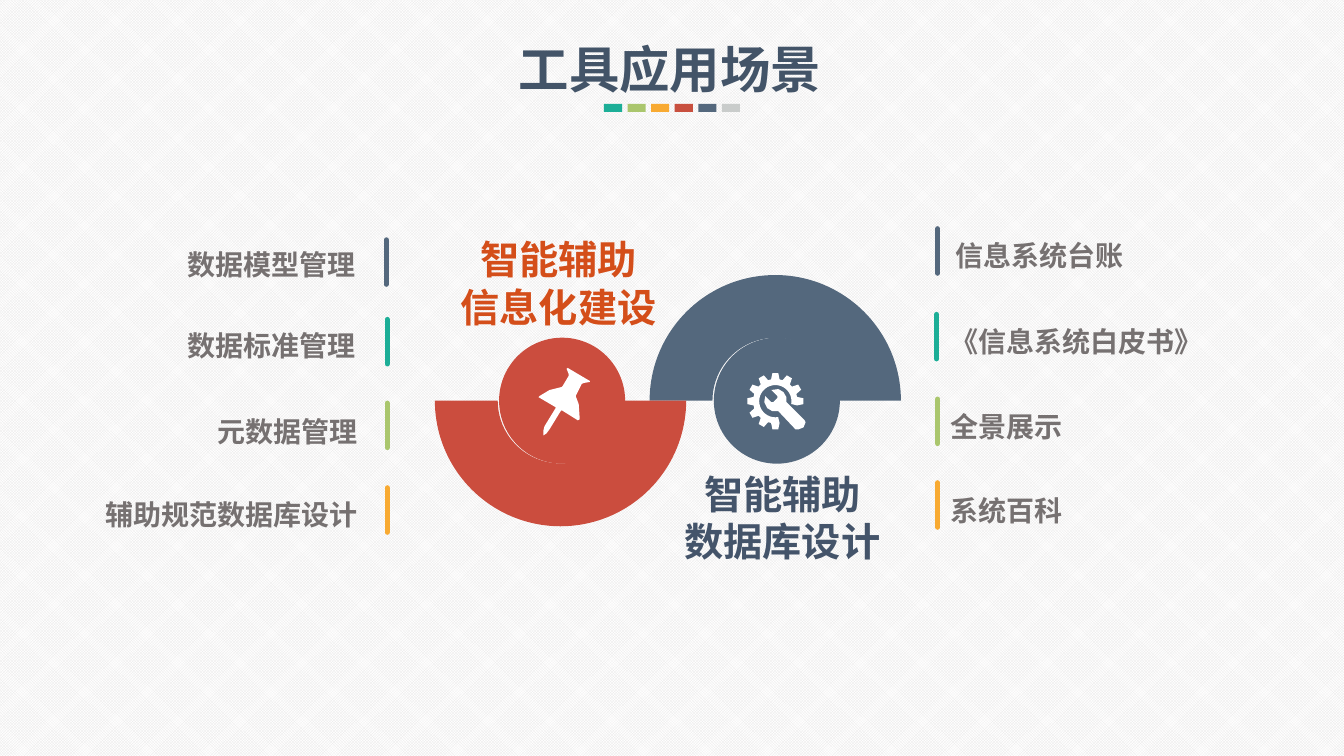
from math import cos, radians, sin

from lxml.etree import SubElement
from pptx import Presentation
from pptx.chart.data import CategoryChartData
from pptx.dml.color import RGBColor
from pptx.enum.chart import XL_CHART_TYPE as CHART
from pptx.enum.dml import MSO_PATTERN
from pptx.enum.shapes import MSO_CONNECTOR, MSO_SHAPE
from pptx.enum.text import MSO_ANCHOR, MSO_AUTO_SIZE, PP_ALIGN as ALIGN
from pptx.oxml import parse_xml
from pptx.oxml.ns import nsdecls, qn
from pptx.util import Inches, Pt

FONT = "Noto Sans CJK SC"
WHITE = RGBColor(0xFF, 0xFF, 0xFF)
CHECK = RGBColor(0xE7, 0xE6, 0xE6)
TEAL = RGBColor(0x1C, 0xAE, 0x97)
GREEN = RGBColor(0xAA, 0xC6, 0x6D)
AMBER = RGBColor(0xF8, 0xAA, 0x32)
BRICK = RGBColor(0xC8, 0x4F, 0x3E)
RED = RGBColor(0xCB, 0x4D, 0x3E)
SLATE = RGBColor(0x54, 0x68, 0x7D)
SILVER = RGBColor(0xC9, 0xCC, 0xCB)
TITLE = RGBColor(0x43, 0x54, 0x68)
NAVY = RGBColor(0x44, 0x54, 0x6A)
ORANGE = RGBColor(0xD4, 0x4E, 0x1A)
GREY = RGBColor(0x76, 0x71, 0x71)
BLACK = RGBColor(0, 0, 0)

ROW_COLORS = (SLATE, TEAL, GREEN, AMBER)
LEFT_ROWS = (("数据模型管理", 3.83, 2.38, 0.72, 2.31),
             ("数据标准管理", 3.84, 3.17, 0.72, 3.11),
             ("元数据管理", 3.84, 4, 0.74, 3.96),
             ("辅助规范数据库设计", 3.84, 4.84, 0.74, 4.79))
RIGHT_ROWS = (("信息系统台账", 9.3, 2.27, 9.38, 2.22),
              ("《信息系统白皮书》", 9.29, 3.12, 9.33, 3.07),
              ("全景展示", 9.3, 3.96, 9.33, 3.91),
              ("系统百科", 9.3, 4.79, 9.33, 4.75))
WRENCH = ((7.99, 4.19), (7.98, 4.17), (7.8, 3.99), (7.8, 3.94), (7.77, 3.89),
          (7.72, 3.86), (7.65, 3.87), (7.71, 3.93), (7.71, 3.95), (7.67, 3.99),
          (7.65, 3.99), (7.59, 3.93), (7.58, 3.99), (7.61, 4.05), (7.66, 4.08),
          (7.72, 4.08), (7.89, 4.26), (7.92, 4.26), (7.97, 4.24))
PIN = ((5.39, 4.27), (5.4, 4.23), (5.51, 4.05), (5.51, 4.04), (5.34, 3.94),
       (5.35, 3.93), (5.45, 3.87), (5.57, 3.84), (5.58, 3.83), (5.64, 3.73),
       (5.64, 3.71), (5.62, 3.66), (5.63, 3.65), (5.85, 3.78), (5.85, 3.79),
       (5.79, 3.8), (5.77, 3.81), (5.72, 3.91), (5.71, 3.93), (5.74, 4.01),
       (5.75, 4.16), (5.73, 4.17), (5.57, 4.07), (5.56, 4.08), (5.45, 4.26),
       (5.42, 4.3), (5.39, 4.32))


def write(sp, lines, size, color, align, spacing=None):
    tf = sp.text_frame
    tf.word_wrap = True
    tf.auto_size = MSO_AUTO_SIZE.SHAPE_TO_FIT_TEXT
    tf.vertical_anchor = MSO_ANCHOR.TOP
    tf.text = "\n".join(lines)
    for p in tf.paragraphs:
        p.alignment = align
        if spacing:
            p.line_spacing = spacing
        p.font.size = Pt(size)
        p.font.bold = True
        p.font.color.rgb = color
        p.font.name = FONT
        SubElement(p.font._element, qn("a:ea"), typeface=FONT)


def add_text(slide, box, *style):
    sp = slide.shapes.add_textbox(*map(Inches, box))
    write(sp, *style)


def paint(sp, color):
    sp.shadow.inherit = False
    sp.fill.solid()
    sp.fill.fore_color.rgb = color
    sp.line.fill.background()


def add_block(slide, kind, box, color):
    paint(slide.shapes.add_shape(kind, *map(Inches, box)), color)


def add_outline(slide, points):
    start, *rest = [(Inches(x), Inches(y)) for x, y in points]
    builder = slide.shapes.build_freeform(*start)
    builder.add_line_segments(rest, close=True)
    paint(builder.convert_to_shape(), WHITE)


def gear_points(cx, cy):
    def polar(radius, angle):
        return cx + radius * cos(radians(angle)), cy + radius * sin(radians(angle))

    tooth = ((0.22, -11), (0.28, -6), (0.28, 6), (0.22, 11))
    rim = [polar(r, a + turn) for a in range(90, 361, 30) for r, turn in tooth]
    bore = [polar(0.16, a) for a in range(370, 79, -10)]
    return rim + bore


def add_half_ring(slide, left, colors):
    data = CategoryChartData()
    data.categories = ["1", "2"]
    data.add_series("Series 1", (50, 50))
    box = map(Inches, (left, 2.59, 4.16, 2.77))
    chart = slide.shapes.add_chart(CHART.DOUGHNUT, *box, data).chart
    chart.has_legend = False
    chart.has_title = False
    chart.font.size = Pt(10)
    chart.font.name = "Calibri"
    chart.font.color.rgb = BLACK
    plot = chart.plots[0]
    plot.vary_by_categories = True
    for i, color in enumerate(colors):
        look = plot.series[0].points[i].format
        look.line.fill.background()
        if color:
            look.fill.solid()
            look.fill.fore_color.rgb = color
        else:
            look.fill.background()
    ring = plot._element
    ring.find(qn("c:firstSliceAng")).set("val", "90")
    ring.find(qn("c:holeSize")).set("val", "73")
    area = ring.getparent()
    for old in area.findall(qn("c:layout")):
        area.remove(old)
    area.insert(0, parse_xml(
        f'<c:layout {nsdecls("c")}><c:manualLayout><c:layoutTarget val="inner"/>'
        '<c:xMode val="edge"/><c:yMode val="edge"/><c:x val="0.2"/><c:y val="0.05"/>'
        '<c:w val="0.6"/><c:h val="0.9"/></c:manualLayout></c:layout>'))


def add_bar(slide, x, y, color):
    ends = map(Inches, (x, y, x, y + 0.44))
    line = slide.shapes.add_connector(MSO_CONNECTOR.STRAIGHT, *ends)
    line.line.color.rgb = color
    line.line.width = Pt(3.75)
    props = line._element.spPr
    props.find(qn("a:ln")).set("cap", "rnd")
    SubElement(props, qn("a:effectLst"))


def add_rows(slide, rows, width, align):
    for color, (label, bar_x, bar_y, x, y) in zip(ROW_COLORS, rows):
        add_bar(slide, bar_x, bar_y, color)
        add_text(slide, (x, y, width, 0.54), [label], 20, GREY, align, 1.3)


def main():
    """Build the tool scenario slide and save it."""
    prs = Presentation()
    prs.slide_width, prs.slide_height = Inches(13.33), Inches(7.5)
    slide = prs.slides.add_slide(prs.slide_layouts[5])
    back = slide.background.fill
    back.patterned()
    back.pattern = MSO_PATTERN.SMALL_CHECKER_BOARD
    back.fore_color.rgb = CHECK
    back.back_color.rgb = WHITE

    title = slide.shapes.title
    title.left, title.top, title.width, title.height = map(
        Inches, (4.45, 0.33, 4.39, 0.71))
    write(title, ["工具应用场景"], 36, TITLE, ALIGN.CENTER)
    for i, color in enumerate((TEAL, GREEN, AMBER, BRICK, SLATE, SILVER)):
        add_block(slide, MSO_SHAPE.RECTANGLE, (5.99 + 0.234 * i, 1.03, 0.18, 0.08), color)

    add_half_ring(slide, 5.61, (None, SLATE))
    add_half_ring(slide, 3.48, (RED, None))
    for left, color in ((4.95, RED), (7.08, SLATE)):
        add_block(slide, MSO_SHAPE.OVAL, (left, 3.35, 1.25, 1.25), color)
    for points in (gear_points(7.69, 3.98), WRENCH, PIN):
        add_outline(slide, points)

    add_text(slide, (3.92, 2.29, 3.24, 1.04), ["智能辅助", "信息化建设"],
             28, ORANGE, ALIGN.CENTER)
    add_text(slide, (5.84, 4.62, 3.84, 1.04), ["智能辅助", "数据库设计"],
             28, NAVY, ALIGN.CENTER)
    add_rows(slide, LEFT_ROWS, 2.91, ALIGN.RIGHT)
    add_rows(slide, RIGHT_ROWS, 3.77, ALIGN.JUSTIFY)
    prs.save("out.pptx")


if __name__ == "__main__":
    main()
